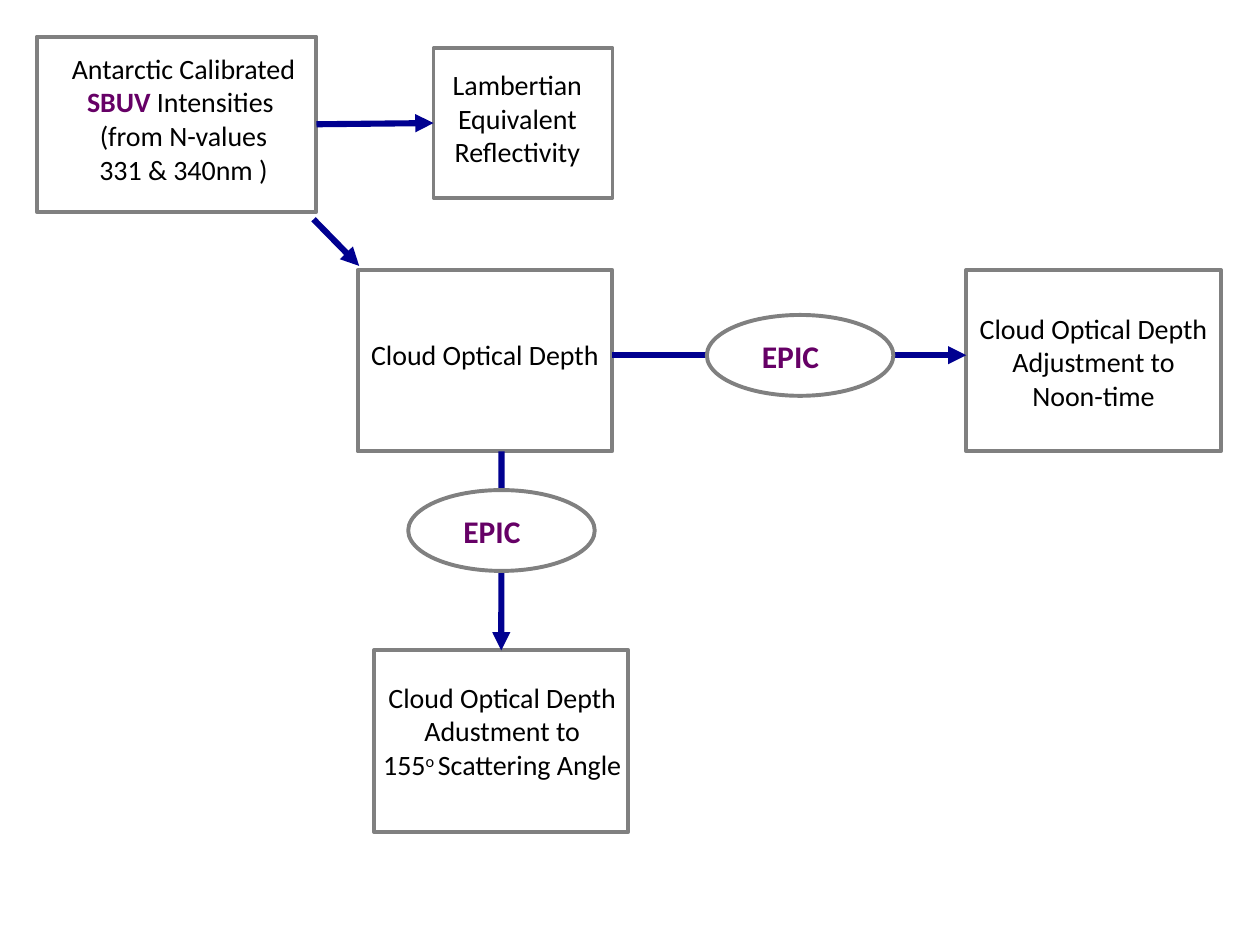
"""Builds a flow chart of cloud optical depth steps from SBUV and EPIC data."""
from dataclasses import dataclass

from lxml import etree
from pptx import Presentation
from pptx import util as u
from pptx.dml.color import RGBColor
from pptx.enum import shapes, text
from pptx.oxml.ns import qn


@dataclass(frozen=True)
class Theme:
    """Colours, type sizes and line widths of the slide."""
    font: str = "Calibri"
    ink: RGBColor = RGBColor(0, 0, 0)
    grey: RGBColor = RGBColor(0x80, 0x80, 0x80)
    navy: RGBColor = RGBColor(0, 0, 0x90)
    plum: RGBColor = RGBColor(0x66, 0, 0x66)
    white: RGBColor = RGBColor(0xFF, 0xFF, 0xFF)
    body: u.Pt = u.Pt(16)
    large: u.Pt = u.Pt(18)
    edge: u.Pt = u.Pt(2.25)
    stroke: u.Pt = u.Pt(3.5)


THEME = Theme()
STEP = (5.13, 3.66)


def cms(*sizes):
    """Turn plain numbers into centimetre lengths."""
    return [u.Cm(size) for size in sizes]


def add_frame(slide, kind, *place):
    """Add an unfilled grey outline."""
    frame = slide.shapes.add_shape(kind, *cms(*place))
    frame.shadow.inherit = False
    frame.fill.background()
    frame.line.color.rgb = THEME.grey
    frame.line.width = THEME.edge
    return frame


def style(run, size, color, bold=False):
    """Format one run."""
    run.font.name = THEME.font
    run.font.size = size
    run.font.color.rgb = color
    run.font.bold = bold


def add_label(slide, place, *lines):
    """Add centred text, each line given as a tuple of its runs."""
    label = slide.shapes.add_textbox(*cms(*place)).text_frame
    label.word_wrap = True
    label.auto_size = text.MSO_AUTO_SIZE.SHAPE_TO_FIT_TEXT
    for index, (first, *others) in enumerate(lines):
        para = label.add_paragraph() if index else label.paragraphs[0]
        para.text = first
        para.alignment = text.PP_ALIGN.CENTER
        for other in others:
            para.add_run().text = other
        for run in para.runs:
            style(run, THEME.body, THEME.ink)
    return label


def add_box(slide, place, label, *lines):
    """Add a rectangle with its label and return both."""
    box = add_frame(slide, shapes.MSO_SHAPE.RECTANGLE, *place)
    return box, add_label(slide, label, *lines)


def add_arrow(slide, start, end):
    """Add a navy arrow between two points."""
    arrow = slide.shapes.add_connector(
        shapes.MSO_CONNECTOR.STRAIGHT, *cms(*start, *end))
    arrow.line.color.rgb = THEME.navy
    arrow.line.width = THEME.stroke
    etree.SubElement(arrow.line._get_or_add_ln(), qn("a:tailEnd"), type="triangle")
    etree.SubElement(arrow._element.spPr, qn("a:effectLst"))
    return arrow


def add_epic(slide, left, top):
    """Add a white ellipse that names EPIC."""
    oval = add_frame(slide, shapes.MSO_SHAPE.OVAL, left, top, 3.76, 1.63)
    oval.fill.solid()
    oval.fill.fore_color.rgb = THEME.white
    name = slide.shapes.add_textbox(*cms(left + 0.86, top + 0.31, 1.68, 1.02))
    name.fill.solid()
    name.fill.fore_color.rgb = THEME.white
    name.text_frame.word_wrap = False
    name.text_frame.auto_size = text.MSO_AUTO_SIZE.SHAPE_TO_FIT_TEXT
    name.text_frame.text = "EPIC"
    style(name.text_frame.paragraphs[0].runs[0], THEME.large, THEME.plum, True)


def main():
    """Build and save the slide."""
    deck = Presentation()
    deck.slide_width, deck.slide_height = cms(25.4, 19.05)
    slide = deck.slides.add_slide(deck.slide_layouts[6])

    source, label = add_box(
        slide, (0.74, 0.74, 5.64, 3.53), (0.74, 0.91, 5.92, 3),
        ("Antarctic Calibrated ", "SBUV", " Intensities "),
        ("(from N-values",), ("331 & 340nm )",))
    style(label.paragraphs[0].runs[1], THEME.body, THEME.plum, True)

    lambert, _ = add_box(
        slide, (8.74, 0.97, 3.61, 3.02), (8.13, 1.24, 4.6, 2.31),
        ("Lambertian Equivalent Reflectivity",))

    angle, label = add_box(
        slide, (7.54, 13.11, *STEP), (7.42, 13.59, 5.41, 2.31),
        ("Cloud Optical Depth",), ("Adustment to",),
        ("155", "o ", "Scattering Angle"))
    label.paragraphs[2].runs[1]._r.get_or_add_rPr().set("baseline", "30000")

    add_box(slide, (7.21, 5.44, *STEP), (7.21, 6.68, 5.13, 0.94),
            ("Cloud Optical Depth",))
    add_box(slide, (19.48, 5.44, *STEP), (19.48, 6.15, 5.13, 2.31),
            ("Cloud Optical Depth",), ("Adjustment to Noon-time",))

    add_arrow(slide, (6.32, 4.42), (7.24, 5.36))
    add_arrow(slide, (12.34, 7.16), (19.48, 7.16))
    add_arrow(slide, (10.11, 9.1), (10.11, 13.11)).end_connect(angle, 0)
    link = add_arrow(slide, (6.38, 2.5), (8.74, 2.5))
    link.begin_connect(source, 3)
    link.end_connect(lambert, 1)

    add_epic(slide, 14.25, 6.35)
    add_epic(slide, 8.23, 9.88)
    deck.save("out.pptx")


if __name__ == "__main__":
    main()
